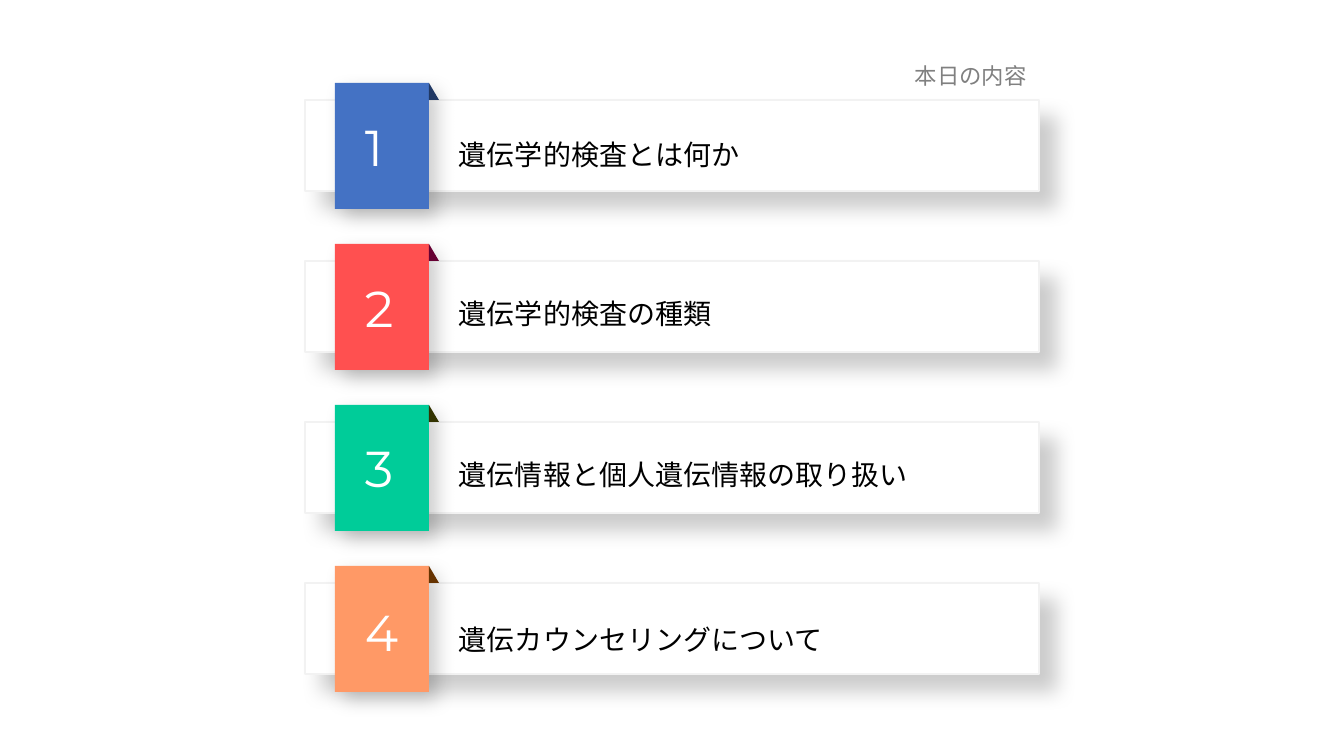
from lxml import etree
from pptx import Presentation
from pptx import util as u
from pptx.dml.color import RGBColor
from pptx.enum import shapes, text
from pptx.oxml.ns import qn

SCALE = u.Inches(1) / 100.8
LATIN, KANJI = "Montserrat", "Noto Sans CJK JP"
LEFT, TOP, WIDTH, HEIGHT, PITCH = 305, 100, 734, 91, 161

# label, tab colour, fold colour, number drop, label drop
ROWS = [
    ("遺伝学的検査とは何か", "4472C4", "203864", 11, 16),
    ("遺伝学的検査の種類", "FF5050", "660033", 11, 14),
    ("遺伝情報と個人遺伝情報の取り扱い", "00CC99", "333300", 10, 14),
    ("遺伝カウンセリングについて", "FF9966", "663300", 13, 18),
]


def px(n):
    return u.Emu(round(n * SCALE))


def color(code):
    return RGBColor.from_string(code)


def cast(shape, dist):
    """Give the shape a soft shadow down to the right."""
    effects = shape._element.spPr.find(qn("a:effectLst"))
    outer = etree.SubElement(
        effects, qn("a:outerShdw"), blurRad=str(u.Pt(14)),
        dist=str(u.Pt(dist)), dir="2700000", algn="tl", rotWithShape="0")
    black = etree.SubElement(outer, qn("a:srgbClr"), val="000000")
    etree.SubElement(black, qn("a:alpha"), val="20000")


def block(slide, kind, box, fill, line=None, dist=0):
    shape = slide.shapes.add_shape(kind, *map(px, box))
    shape.shadow.inherit = False
    shape.fill.solid()
    shape.fill.fore_color.rgb = color(fill)
    if line:
        shape.line.color.rgb = color(line)
        shape.line.width = u.Pt(1)
    else:
        shape.line.fill.background()
    if dist:
        cast(shape, dist)


def write(slide, box, words, size, face, tint, wrap=False, space=None):
    frame = slide.shapes.add_textbox(*map(px, box)).text_frame
    frame.word_wrap = wrap
    frame.auto_size = text.MSO_AUTO_SIZE.SHAPE_TO_FIT_TEXT
    para = frame.paragraphs[0]
    para.text = words
    para.line_spacing = space
    font = para.font
    font.size = u.Pt(size)
    font.color.rgb = color(tint)
    font.name = face
    # East Asian letters need their own typeface entry
    props = para._p.pPr.find(qn("a:defRPr"))
    etree.SubElement(props, qn("a:ea"), typeface=face)


def row(slide, box, number, label, tab, fold, num_drop, drop):
    x, y, w, h = box
    rect = shapes.MSO_SHAPE.RECTANGLE
    # Card, tab and folded corner
    block(slide, rect, box, "FFFFFF", "F2F2F2", 16)
    block(slide, rect, (x + 30, y - 17, 94, h + 35), tab, dist=8)
    block(slide, shapes.MSO_SHAPE.RIGHT_TRIANGLE,
          (x + 124, y - 17, 10, 17), fold)
    # Number and label
    write(slide, (x + 50, y + num_drop, 54, 72), str(number), 36,
          LATIN, "FFFFFF")
    write(slide, (x + 144, y + drop, w - 144, 56), label, 20,
          KANJI, "000000", True, 1.5)


def agenda(slide, box):
    x, y, w, h = box
    # Heading above the right end of the first card
    write(slide, (x + w - 134, y - 43, 133, 37), "本日の内容", 16,
          KANJI, "808080")
    for i, item in enumerate(ROWS):
        row(slide, (x, y + i * PITCH, w, h), i + 1, *item)


def main():
    deck = Presentation()
    deck.slide_width, deck.slide_height = px(1344), px(756)
    slide = deck.slides.add_slide(deck.slide_layouts[6])
    agenda(slide, (LEFT, TOP, WIDTH, HEIGHT))
    deck.save("out.pptx")


if __name__ == "__main__":
    main()
